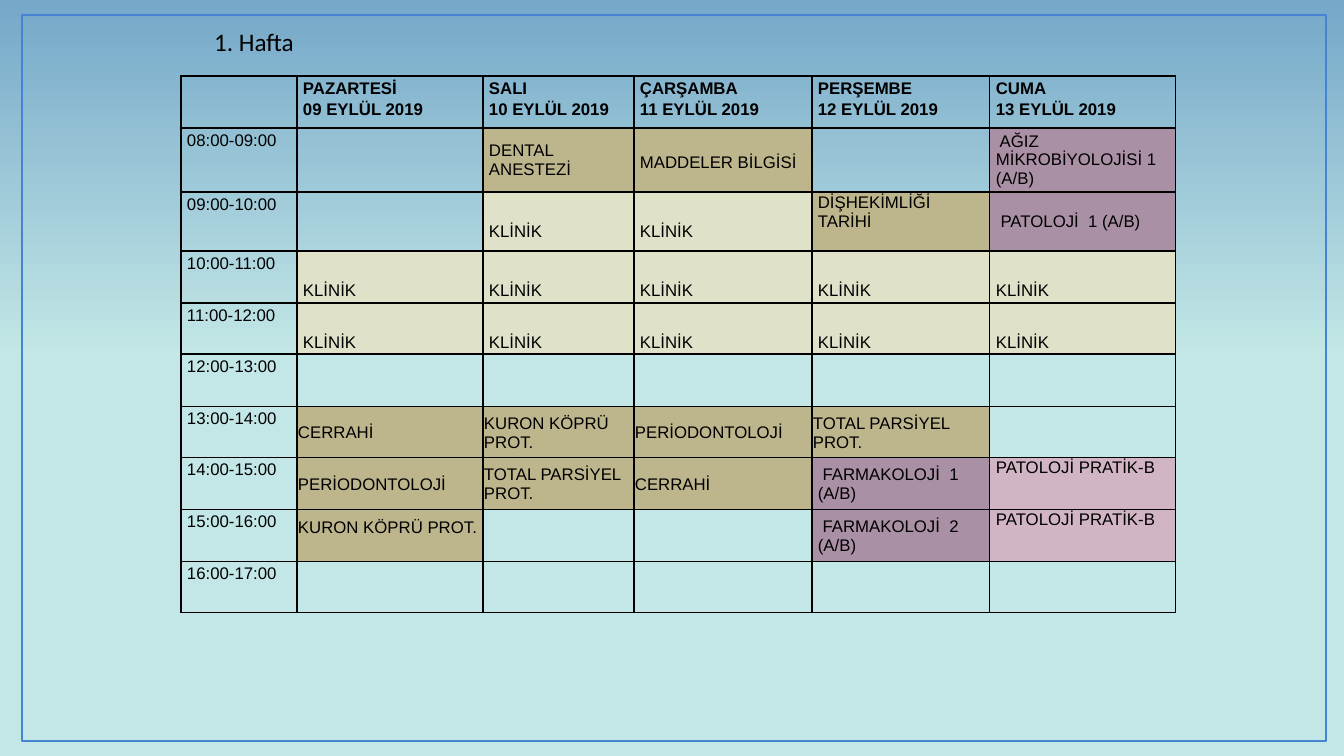
from lxml.etree import SubElement
from pptx import Presentation
from pptx.dml.color import RGBColor
from pptx.enum.shapes import MSO_SHAPE
from pptx.enum.text import MSO_ANCHOR, PP_ALIGN
from pptx.oxml.ns import qn
from pptx.util import Pt

PX = 914400 / 100.8
COLORS = {
    "black": "000000", "frame": "4584D3", "sky": "75A8C9", "mist": "C3E7E6",
    "lecture": "BDB68D", "clinic": "E0E1C9", "science": "AA90A4", "practice": "D1B5C5",
}
TITLE = "1. Hafta"
DAYS = ["PAZARTESİ\n09 EYLÜL 2019", "SALI\n10 EYLÜL 2019", "ÇARŞAMBA\n11 EYLÜL 2019",
        "PERŞEMBE\n12 EYLÜL 2019", "CUMA\n13 EYLÜL 2019"]
HOURS = [f"{h:02}:00-{h + 1:02}:00" for h in range(8, 17)]

# style: fill, anchor, then left, top and bottom inset in px
TOP, MIDDLE = MSO_ANCHOR.TOP, MSO_ANCHOR.MIDDLE
STYLES = {
    "label": (None, TOP, 6, 0, 0),
    "lecture": ("lecture", MIDDLE, 6, 0, 0),
    "lecture low": ("lecture", MIDDLE, 6, 6, 0),
    "lecture top": ("lecture", TOP, 6, 1, 0),
    "lecture edge": ("lecture", MIDDLE, 1, 1, 0),
    "lecture raised": ("lecture", MIDDLE, 1, 1, 18),
    "clinic": ("clinic", TOP, 6, 30, 0),
    "science": ("science", MIDDLE, 6, 0, 0),
    "practice": ("practice", TOP, 6, 0, 0),
}
EMPTY = ("", "label")
CLINIC = ("KLİNİK", "clinic")
SURGERY = ("CERRAHİ", "lecture edge")
CROWN = "KURON KÖPRÜ PROT."
PERIO = ("PERİODONTOLOJİ", "lecture edge")
DENTURE = ("TOTAL PARSİYEL PROT.", "lecture edge")
PATHOLOGY = ("PATOLOJİ PRATİK-B", "practice")
LESSONS = [
    [EMPTY, ("DENTAL ANESTEZİ", "lecture"), ("MADDELER BİLGİSİ", "lecture low"), EMPTY,
     (" AĞIZ MİKROBİYOLOJİSİ 1 (A/B)", "science")],
    [EMPTY, CLINIC, CLINIC, ("DİŞHEKİMLİĞİ TARİHİ", "lecture top"),
     (" PATOLOJİ  1 (A/B)", "science")],
    [CLINIC] * 5,
    [CLINIC] * 5,
    [EMPTY] * 5,
    [SURGERY, (CROWN, "lecture edge"), PERIO, DENTURE, EMPTY],
    [PERIO, DENTURE, SURGERY, (" FARMAKOLOJİ  1 (A/B)", "science"), PATHOLOGY],
    [(CROWN, "lecture raised"), EMPTY, EMPTY, (" FARMAKOLOJİ  2 (A/B)", "science"), PATHOLOGY],
    [EMPTY] * 5,
]
COLS = [116, 186, 151, 178, 178, 186]
ROWS = [52, 64, 59, 52, 51, 53, 51, 52, 52, 51]


def px(n):
    return round(n * PX)


def rgb(name):
    return RGBColor.from_string(COLORS[name])


def add_borders(cell):
    tcPr = cell._tc.get_or_add_tcPr()
    for side in ("lnL", "lnR", "lnT", "lnB"):
        ln = SubElement(tcPr, qn(f"a:{side}"), w=str(Pt(1)))
        SubElement(SubElement(ln, qn("a:solidFill")), qn("a:srgbClr"), val=COLORS["black"])


def fill_cell(cell, text, style, bold=False, spacing=None):
    fill, anchor, left, top, bottom = STYLES[style]
    add_borders(cell)
    if fill:
        cell.fill.solid()
        cell.fill.fore_color.rgb = rgb(fill)
    else:
        cell.fill.background()
    cell.vertical_anchor = anchor
    cell.margin_left = cell.margin_right = px(left)
    cell.margin_top, cell.margin_bottom = px(top), px(bottom)
    cell.text_frame.text = text
    for p in cell.text_frame.paragraphs:
        p.line_spacing = spacing
        p.font.size = Pt(12)
        for r in p.runs:
            set_font(r, "Arial", 12, bold)


def set_font(r, name, size, bold=False):
    r.font.name, r.font.size, r.font.bold = name, Pt(size), bold
    r.font.color.rgb = rgb("black")


def add_background(s):
    fill = s.background.fill
    fill.gradient()
    fill.gradient_angle = 90
    for stop, (name, position) in zip(fill.gradient_stops, [("mist", 0.53), ("sky", 1)]):
        stop.color.rgb = rgb(name)
        stop.position = position


def add_frame(s):
    frame = s.shapes.add_shape(MSO_SHAPE.RECTANGLE, px(22), px(15), px(1304), px(726))
    frame.shadow.inherit = False
    frame.fill.background()
    frame.line.color.rgb = rgb("frame")
    frame.line.width = Pt(1.5)


def add_title(s):
    title = s.shapes.title
    title.left, title.top, title.width, title.height = px(204), px(21), px(102), px(40)
    tf = title.text_frame
    tf.text = TITLE
    tf.word_wrap = False
    tf.vertical_anchor = TOP
    p = tf.paragraphs[0]
    p.alignment = PP_ALIGN.LEFT
    set_font(p.runs[0], "Calibri", 18)


def add_timetable(s):
    table = s.shapes.add_table(len(ROWS), len(COLS), px(181), px(76),
                               px(sum(COLS)), px(sum(ROWS))).table
    table.first_row = table.horz_banding = False
    for col, width in zip(table.columns, COLS):
        col.width = px(width)
    for row, height in zip(table.rows, ROWS):
        row.height = px(height)
    for c, day in enumerate([""] + DAYS):
        fill_cell(table.cell(0, c), day, "label", bold=True, spacing=1.15)
    for r, (hour, lessons) in enumerate(zip(HOURS, LESSONS), 1):
        fill_cell(table.cell(r, 0), hour, "label", spacing=1.15)
        for c, (text, style) in enumerate(lessons, 1):
            fill_cell(table.cell(r, c), text, style)


def main():
    prs = Presentation()
    prs.slide_width, prs.slide_height = px(1344), px(756)
    s = prs.slides.add_slide(prs.slide_layouts[5])
    add_background(s)
    add_frame(s)
    add_timetable(s)
    add_title(s)
    prs.save("out.pptx")


if __name__ == "__main__":
    main()
